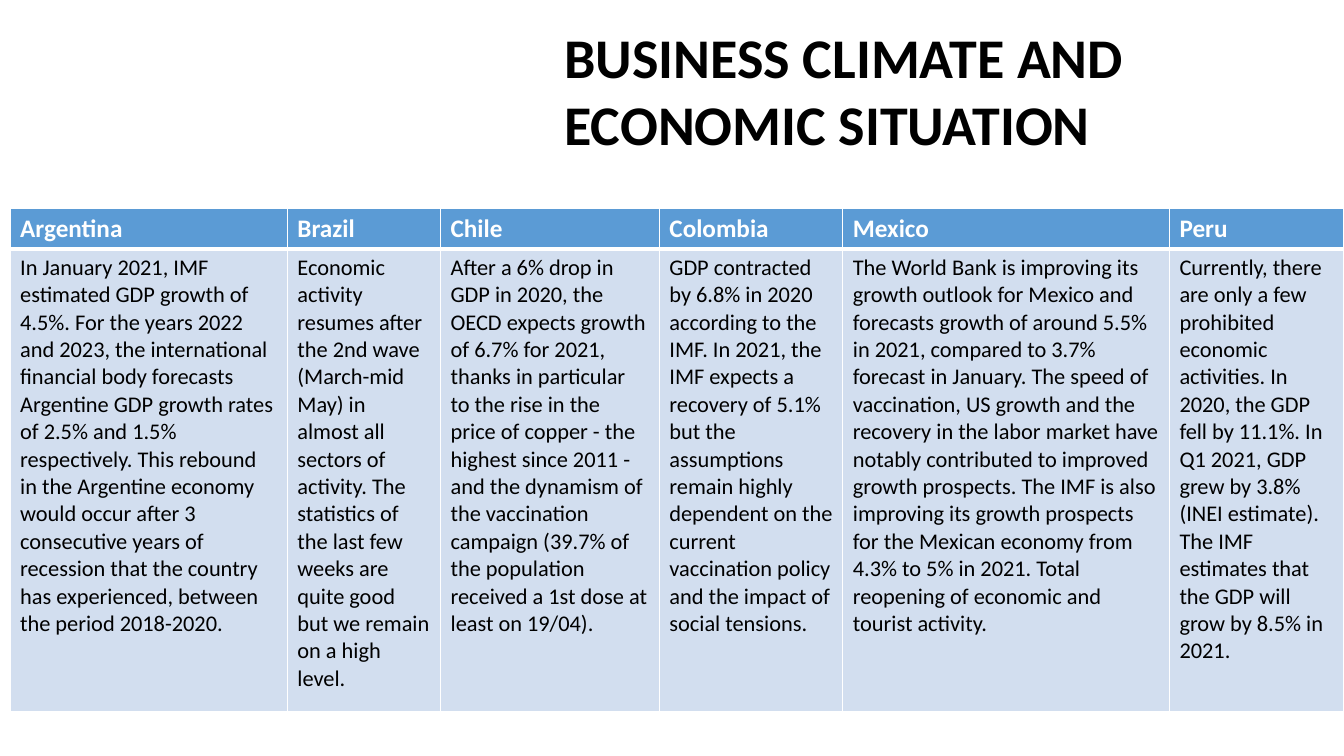
from lxml import etree
from pptx import Presentation
from pptx import util as u
from pptx.dml.color import RGBColor
from pptx.oxml.ns import qn

WIDTH, HEIGHT = 13.33, 7.5
FONT = "Calibri"
COLORS = {"text": "000000", "light": "FFFFFF", "header": "5B9BD5", "body": "D2DEEF"}
TITLE = ["BUSINESS CLIMATE AND", "ECONOMIC SITUATION"]
COLUMN_WIDTHS = [2.75, 1.52, 2.17, 1.82, 3.24, 1.73]
ROW_HEIGHTS = [0.37, 4.59]
COUNTRIES = {
    "Argentina": "In January 2021, IMF estimated GDP growth of 4.5%. For the years 2022 and 2023, "
                 "the international financial body forecasts Argentine GDP growth rates of 2.5% "
                 "and 1.5% respectively. This rebound in the Argentine economy would occur after "
                 "3 consecutive years of recession that the country has experienced, between the "
                 "period 2018-2020.",
    "Brazil": "Economic activity resumes after the 2nd wave (March-mid May) in almost all sectors "
              "of activity. The statistics of the last few weeks are quite good but we remain on "
              "a high level.",
    "Chile": "After a 6% drop in GDP in 2020, the OECD expects growth of 6.7% for 2021, thanks in "
             "particular to the rise in the price of copper - the highest since 2011 - and the "
             "dynamism of the vaccination campaign (39.7% of the population received a 1st dose "
             "at least on 19/04).",
    "Colombia": "GDP contracted by 6.8% in 2020 according to the IMF. In 2021, the IMF expects a "
                "recovery of 5.1% but the assumptions remain highly dependent on the current "
                "vaccination policy and the impact of social tensions.",
    "Mexico": "The World Bank is improving its growth outlook for Mexico and forecasts growth of "
              "around 5.5% in 2021, compared to 3.7% forecast in January. The speed of "
              "vaccination, US growth and the recovery in the labor market have notably "
              "contributed to improved growth prospects. The IMF is also improving its growth "
              "prospects for the Mexican economy from 4.3% to 5% in 2021. Total reopening of "
              "economic and tourist activity.",
    "Peru": "Currently, there are only a few prohibited economic activities. In 2020, the GDP fell "
            "by 11.1%. In Q1 2021, GDP grew by 3.8% (INEI estimate). The IMF estimates that the "
            "GDP will grow by 8.5% in 2021.",
}


def rgb(name):
    return RGBColor.from_string(COLORS[name])


def style(p, size, color, bold):
    p.font.name = FONT
    p.font.size = u.Pt(size)
    p.font.bold = bold
    p.font.color.rgb = rgb(color)


def add_title(s, lines, left, top, width, height):
    tf = s.shapes.add_textbox(*map(u.Inches, (left, top, width, height))).text_frame
    tf.word_wrap = True
    tf.text = "\n".join(lines)
    for p in tf.paragraphs:
        style(p, 40, "text", True)


def set_borders(cell, bottom):
    tcPr = cell._tc.get_or_add_tcPr()
    for i, (side, weight) in enumerate(zip("LRTB", (1, 1, 1, bottom))):
        ln = etree.Element(qn(f"a:ln{side}"), w=str(u.Pt(weight)))
        fill = etree.SubElement(ln, qn("a:solidFill"))
        etree.SubElement(fill, qn("a:srgbClr"), val=COLORS["light"])
        tcPr.insert(i, ln)


def fill_cell(cell, content, fill, size, color, bold, bottom):
    cell.text = content
    cell.fill.solid()
    cell.fill.fore_color.rgb = rgb(fill)
    style(cell.text_frame.paragraphs[0], size, color, bold)
    set_borders(cell, bottom)


def add_country_table(s, left, top):
    size = sum(COLUMN_WIDTHS), sum(ROW_HEIGHTS)
    frame = s.shapes.add_table(len(ROW_HEIGHTS), len(COLUMN_WIDTHS),
                               *map(u.Inches, (left, top, *size)))
    table = frame.table
    for row, height in zip(table.rows, ROW_HEIGHTS):
        row.height = u.Inches(height)
    for c, (country, outlook) in enumerate(COUNTRIES.items()):
        table.columns[c].width = u.Inches(COLUMN_WIDTHS[c])
        fill_cell(table.cell(0, c), country, "header", 18, "light", True, 3)
        fill_cell(table.cell(1, c), outlook, "body", 16, "text", False, 1)


def main():
    prs = Presentation()
    prs.slide_width, prs.slide_height = u.Inches(WIDTH), u.Inches(HEIGHT)
    s = prs.slides.add_slide(prs.slide_layouts[6])
    add_title(s, TITLE, 5.5, 0.17, 6.48, 1.45)
    add_country_table(s, 0.1, 2.07)
    prs.save("out.pptx")


if __name__ == "__main__":
    main()
